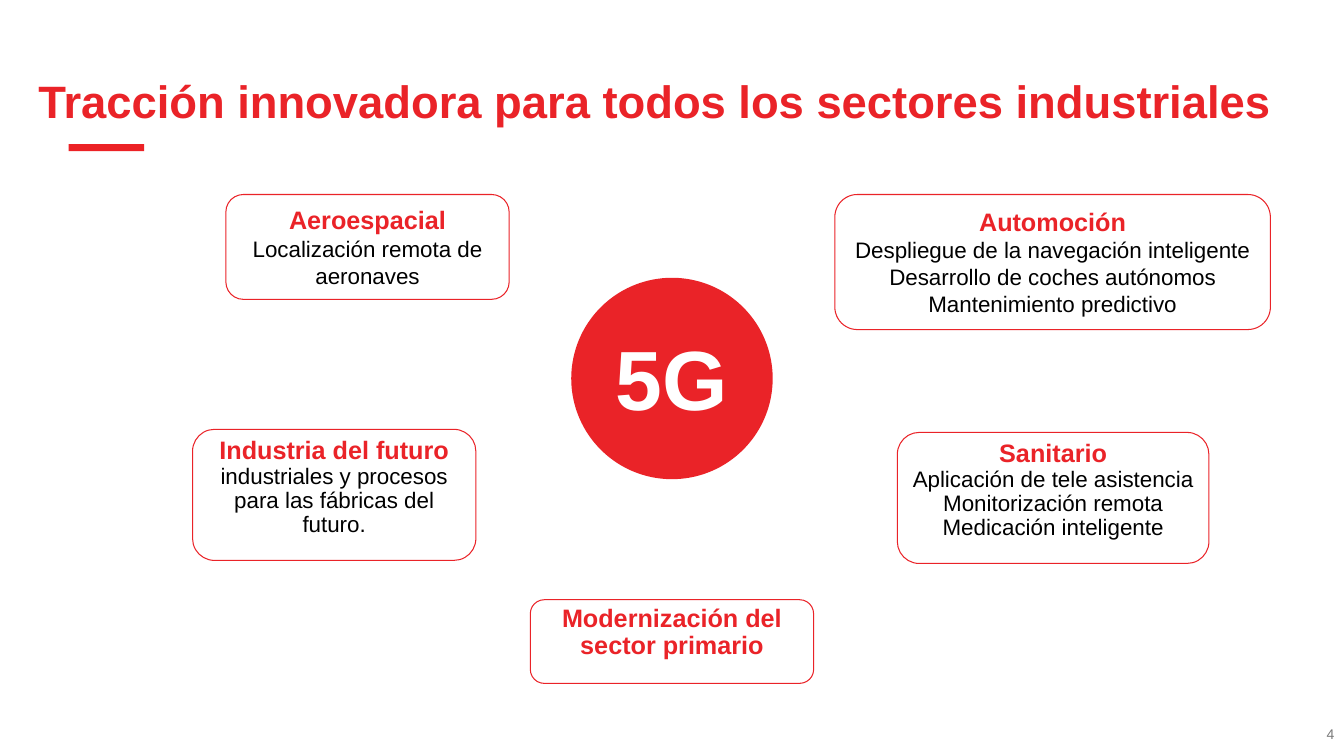
from dataclasses import dataclass

from pptx import Presentation
from pptx.dml.color import RGBColor
from pptx.enum.shapes import MSO_SHAPE
from pptx.enum.text import MSO_ANCHOR, PP_ALIGN
from pptx.util import Inches, Pt


@dataclass(frozen=True)
class Theme:
    font: str = "Arial"
    red: str = "EA2328"
    bar_red: str = "EC2226"
    black: str = "000000"
    white: str = "FFFFFF"
    grey: str = "797979"
    title_size: float = 32.4
    hub_size: float = 60
    heading_size: float = 18
    body_size: float = 16
    number_size: float = 10


WIDE_INSETS = (0.1, 0.05)
TIGHT_INSETS = (0.05, 0.02)


def rgb(color):
    return RGBColor.from_string(color)


def write(frame, text, *, font, size, color, bold=False, align=PP_ALIGN.LEFT, spacing=1.0):
    """Fill the first paragraph of the frame if it is empty, else append one."""
    paragraph = frame.paragraphs[0] if not frame.text else frame.add_paragraph()
    paragraph.alignment = align
    paragraph.line_spacing = spacing
    run = paragraph.add_run()
    run.text = text
    run.font.name = font
    run.font.size = Pt(size)
    run.font.bold = bold
    run.font.color.rgb = rgb(color)


class SlideBuilder:
    def __init__(self, slide, theme):
        self.slide = slide
        self.theme = theme

    def shape(self, kind, box, fill=None, line=None, line_width=0.75):
        shape = self.slide.shapes.add_shape(kind, *map(Inches, box))
        shape.shadow.inherit = False
        if fill:
            shape.fill.solid()
            shape.fill.fore_color.rgb = rgb(fill)
        else:
            shape.fill.background()
        if line:
            shape.line.color.rgb = rgb(line)
            shape.line.width = Pt(line_width)
        else:
            shape.line.fill.background()
        return shape

    def prepare(self, frame, insets, anchor=MSO_ANCHOR.TOP, wrap=True):
        frame.word_wrap = wrap
        frame.vertical_anchor = anchor
        frame.margin_left = frame.margin_right = Inches(insets[0])
        frame.margin_top = frame.margin_bottom = Inches(insets[1])
        return frame

    def label(self, box, text, insets=WIDE_INSETS, anchor=MSO_ANCHOR.TOP, wrap=True, **text_format):
        textbox = self.slide.shapes.add_textbox(*map(Inches, box))
        frame = self.prepare(textbox.text_frame, insets, anchor, wrap)
        write(frame, text, font=self.theme.font, **text_format)

    def sector(self, box, heading, details, insets, spacing):
        """Draw an outlined card with a red heading and centred detail lines."""
        theme = self.theme
        card = self.shape(MSO_SHAPE.ROUNDED_RECTANGLE, box, line=theme.red)
        frame = self.prepare(card.text_frame, insets)
        common = dict(font=theme.font, align=PP_ALIGN.CENTER, spacing=spacing)
        write(frame, heading, size=theme.heading_size, color=theme.red, bold=True, **common)
        for detail in details:
            write(frame, detail, size=theme.body_size, color=theme.black, **common)


SECTORS = [
    ((5.26, 5.95, 2.81, 0.83), "Modernización del sector primario", [], TIGHT_INSETS, 0.9),
    ((1.91, 4.26, 2.81, 1.3), "Industria del futuro",
     ["industriales y procesos para las fábricas del futuro."], TIGHT_INSETS, 0.9),
    ((8.9, 4.29, 3.09, 1.3), "Sanitario",
     ["Aplicación de tele asistencia", "Monitorización remota", "Medicación inteligente"],
     TIGHT_INSETS, 0.9),
    ((8.28, 1.93, 4.32, 1.34), "Automoción",
     ["Despliegue de la navegación inteligente", "Desarrollo de coches autónomos",
      "Mantenimiento predictivo"], WIDE_INSETS, 1.0),
    ((2.24, 1.93, 2.81, 1.04), "Aeroespacial",
     ["Localización remota de aeronaves"], WIDE_INSETS, 1.0),
]


def main():
    presentation = Presentation()
    presentation.slide_width = Inches(13.33)
    presentation.slide_height = Inches(7.5)
    theme = Theme()
    builder = SlideBuilder(presentation.slides.add_slide(presentation.slide_layouts[6]), theme)

    builder.shape(MSO_SHAPE.RECTANGLE, (0.68, 1.43, 0.75, 0.07), fill=theme.bar_red)
    builder.label((0.33, 0.4, 12.82, 0.89),
                  "Tracción innovadora para todos los sectores industriales",
                  insets=TIGHT_INSETS, anchor=MSO_ANCHOR.BOTTOM, size=theme.title_size,
                  color=theme.red, bold=True, spacing=0.9)

    builder.shape(MSO_SHAPE.OVAL, (5.68, 2.77, 1.97, 1.97),
                  fill=theme.red, line=theme.red, line_width=2)
    builder.label((5.89, 3.19, 1.55, 1.11), "5G", size=theme.hub_size,
                  color=theme.white, bold=True, align=PP_ALIGN.CENTER)

    for sector in SECTORS:
        builder.sector(*sector)

    builder.label((13.06, 7.15, 0.27, 0.27), "4", wrap=False,
                  size=theme.number_size, color=theme.grey)
    presentation.save("out.pptx")


if __name__ == "__main__":
    main()
